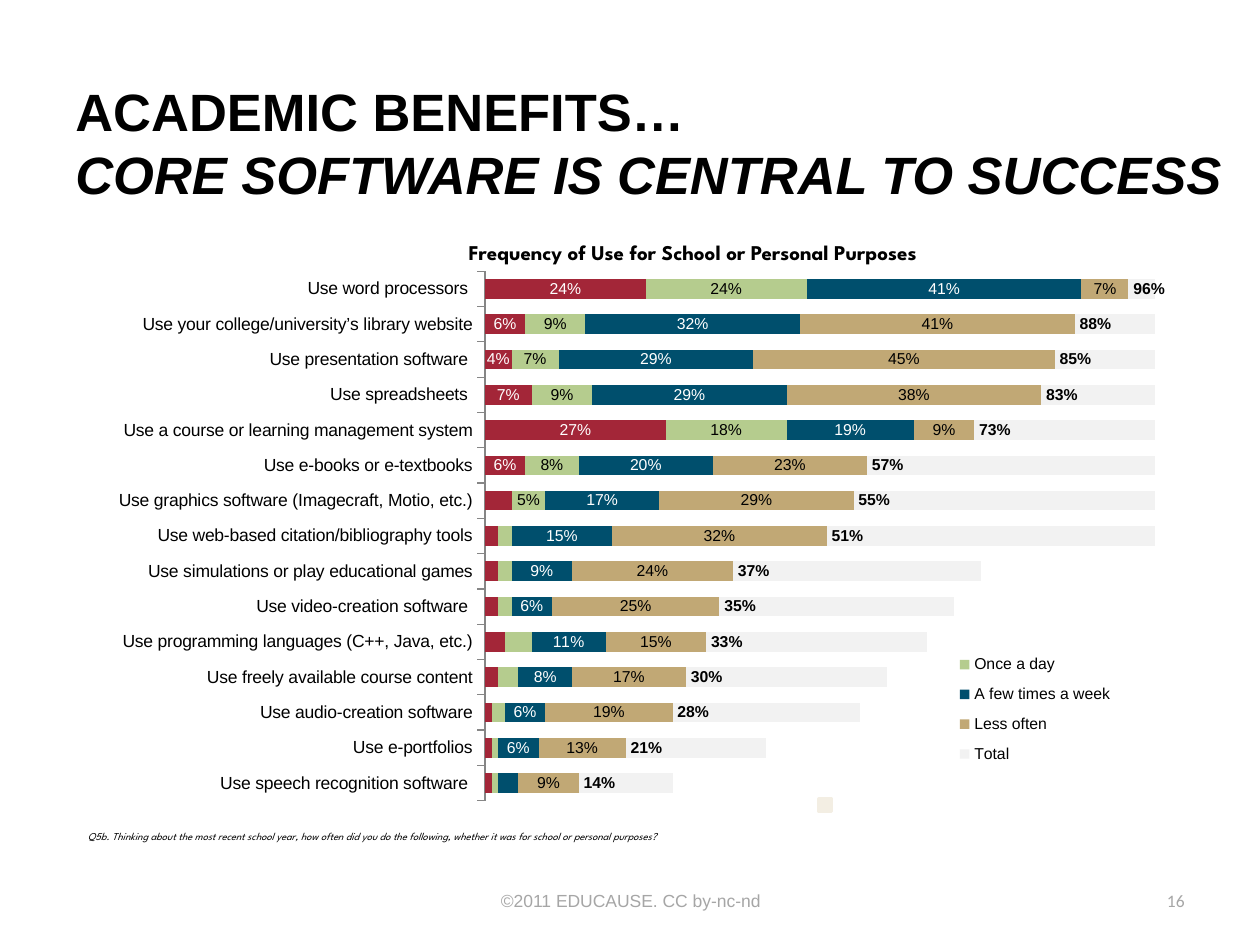
from dataclasses import dataclass

from lxml.etree import SubElement
from pptx import Presentation
from pptx.chart.data import CategoryChartData
from pptx.dml.color import RGBColor
from pptx.enum.chart import XL_CHART_TYPE as ChartType, XL_LABEL_POSITION as LabelPos
from pptx.enum.chart import XL_LEGEND_POSITION as LegendPos, XL_TICK_MARK as Tick
from pptx.enum.shapes import MSO_SHAPE as Shape
from pptx.enum.text import MSO_ANCHOR as Anchor, PP_ALIGN as Align
from pptx.oxml import parse_xml
from pptx.oxml.ns import nsdecls, qn
from pptx.util import Inches, Pt


@dataclass(frozen=True)
class Theme:
    """Colours, fonts and type sizes of the slide."""
    ink: str = "000000"
    white: str = "FFFFFF"
    muted: str = "A6A6A6"
    axis: str = "868686"
    marker: str = "F3EEE3"
    body: str = "Arial"
    accent: str = "League Spartan"
    number: str = "Calibri"
    title_size: int = 30
    heading_size: int = 12
    small_size: int = 10
    label_size: int = 9
    note_size: int = 6


THEME = Theme()

CATEGORIES = [
    "Use word processors ",
    "Use your college/university’s library website",
    "Use presentation software ",
    "Use spreadsheets ",
    "Use a course or learning management system",
    "Use e-books or e-textbooks",
    "Use graphics software (Imagecraft, Motio, etc.)",
    "Use web-based citation/bibliography tools",
    "Use simulations or play educational games",
    "Use video-creation software ",
    "Use programming languages (C++, Java, etc.)",
    "Use freely available course content",
    "Use audio-creation software",
    "Use e-portfolios",
    "Use speech recognition software ",
]


@dataclass(frozen=True)
class Frequency:
    """One series: percentages, bar and label colours, first row without a label."""
    name: str
    percents: tuple
    fill: str
    label: str
    unlabelled_from: int = len(CATEGORIES)
    position: LabelPos = LabelPos.CENTER
    bold: bool = False


FREQUENCIES = [
    Frequency("Several times a day", (24, 6, 4, 7, 27, 6, 4, 2, 2, 2, 3, 2, 1, 1, 1),
              "A32638", THEME.white, 6),
    Frequency("Once a day", (24, 9, 7, 9, 18, 8, 5, 2, 2, 2, 4, 3, 2, 1, 1),
              "B5CC8E", THEME.ink, 7),
    Frequency("A few times a week", (41, 32, 29, 29, 19, 20, 17, 15, 9, 6, 11, 8, 6, 6, 3),
              "004F6D", THEME.white, 14),
    Frequency("Less often", (7, 41, 45, 38, 9, 23, 29, 32, 24, 25, 15, 17, 19, 13, 9),
              "C1A875", THEME.ink),
    Frequency("Total", (96, 88, 85, 83, 73, 57, 55, 51, 37, 35, 33, 30, 28, 21, 14),
              "F2F2F2", THEME.ink, position=LabelPos.INSIDE_BASE, bold=True),
]


def style_font(font, size, color=THEME.ink, name=THEME.body, bold=False, italic=False):
    """Set the typeface, size, colour and emphasis of a font."""
    font.name, font.size, font.bold, font.italic = name, Pt(size), bold, italic
    font.color.rgb = RGBColor.from_string(color)


def add_text(page, box, lines, align=Align.LEFT, anchor=Anchor.TOP, **style):
    """Add a text box; each line is a string with its italic flag."""
    frame = page.shapes.add_textbox(*map(Inches, box)).text_frame
    frame.word_wrap, frame.vertical_anchor = True, anchor
    para = frame.paragraphs[0]
    para.alignment = align
    for index, (text, italic) in enumerate(lines):
        if index:
            para.add_line_break()
        span = para.add_run()
        span.text = text
        style_font(span.font, italic=italic, **style)


def set_layout(parent, after, x, y, width, height, inner=False):
    """Place a plot area or legend by fractions of the chart box."""
    target = '<c:layoutTarget val="inner"/>' if inner else ""
    modes = '<c:xMode val="edge"/><c:yMode val="edge"/>'
    sizes = "".join(f'<c:{tag} val="{value}"/>'
                    for tag, value in zip("xywh", (x, y, width, height)))
    for old in parent.findall(qn("c:layout")):
        parent.remove(old)
    layout = parse_xml(f'<c:layout {nsdecls("c")}><c:manualLayout>'
                       f'{target}{modes}{sizes}</c:manualLayout></c:layout>')
    position = parent.index(after) + 1 if after is not None else 0
    parent.insert(position, layout)


def style_series(series, frequency):
    """Colour a series and show its labels on the wider bars."""
    series.format.fill.solid()
    series.format.fill.fore_color.rgb = RGBColor.from_string(frequency.fill)
    series.invert_if_negative = False
    labels = series.data_labels
    labels.show_value = True
    labels.number_format, labels.number_format_is_linked = "0%", False
    labels.position = frequency.position
    style_font(labels.font, THEME.label_size, frequency.label, bold=frequency.bold)
    element = series._element.find(qn("c:dLbls"))
    for place, row in enumerate(range(frequency.unlabelled_from, len(CATEGORIES))):
        element.insert(place, parse_xml(
            f'<c:dLbl {nsdecls("c")}><c:idx val="{row}"/><c:delete val="1"/></c:dLbl>'))


def add_legend(chart):
    """Add the legend inside the lower right of the chart, with one entry hidden."""
    chart.has_legend = True
    legend = chart.legend
    legend.position, legend.include_in_layout = LegendPos.RIGHT, False
    style_font(legend.font, THEME.label_size)
    element = legend._element
    entry = parse_xml(f'<c:legendEntry {nsdecls("c")}><c:idx val="4"/>'
                      '<c:delete val="1"/></c:legendEntry>')
    element.insert(1, entry)
    set_layout(element, entry, 0.76, 0.69, 0.2, 0.23)


def add_frequency_chart(page, box):
    """Add the stacked bars of how often each tool is used."""
    data = CategoryChartData(number_format="0%")
    data.categories = CATEGORIES
    for frequency in FREQUENCIES:
        data.add_series(frequency.name, [value / 100 for value in frequency.percents])
    chart = page.shapes.add_chart(ChartType.BAR_STACKED, *map(Inches, box), data).chart
    chart.has_title = False
    style_font(chart.font, THEME.label_size)
    plot = chart.plots[0]
    plot.gap_width, plot.overlap, plot.vary_by_categories = 80, 100, False
    for series, frequency in zip(plot.series, FREQUENCIES):
        style_series(series, frequency)
    rows, scale = chart.category_axis, chart.value_axis
    rows.reverse_order = True
    rows.major_tick_mark, rows.minor_tick_mark = Tick.OUTSIDE, Tick.NONE
    rows.format.line.color.rgb = RGBColor.from_string(THEME.axis)
    style_font(rows.tick_labels.font, THEME.small_size)
    scale.minimum_scale, scale.maximum_scale = 0, 1
    scale.has_major_gridlines, scale.visible = False, False
    set_layout(chart._chartSpace.chart.plotArea, None, 0.357, 0.034, 0.613, 0.932, inner=True)
    add_legend(chart)


def add_marker(page, box):
    """Add the small pale square under the chart."""
    marker = page.shapes.add_shape(Shape.RECTANGLE, *map(Inches, box))
    marker.shadow.inherit = False
    marker.fill.solid()
    marker.fill.fore_color.rgb = RGBColor.from_string(THEME.marker)
    marker.line.color.rgb = RGBColor.from_string(THEME.marker)
    marker.line.width = Pt(2)


def add_footer(page, left, top, width, height):
    """Add the centred copyright line and the page number at the right."""
    style = dict(anchor=Anchor.MIDDLE, size=THEME.small_size, color=THEME.muted)
    add_text(page, (left + 2.92, top, 3.17, height),
             [("©2011 EDUCAUSE. CC by-nc-nd", False)], align=Align.CENTER, **style)
    add_text(page, (left + width - 2.33, top, 2.33, height), [("16", False)],
             align=Align.RIGHT, name=THEME.number, **style)


def main():
    """Build the slide and save the deck."""
    deck = Presentation()
    deck.slide_width, deck.slide_height = Inches(10), Inches(7.5)
    page = deck.slides.add_slide(deck.slide_layouts[6])
    add_text(page, (0.5, 0.5, 9.5, 1.25),
             [("ACADEMIC BENEFITS…", False), ("CORE SOFTWARE IS CENTRAL TO SUCCESS", True)],
             anchor=Anchor.MIDDLE, size=THEME.title_size, bold=True)
    add_footer(page, 0.5, 6.95, 9, 0.4)
    add_text(page, (3.2, 1.85, 4.6, 0.3),
             [("Frequency of Use for School or Personal Purposes", False)],
             align=Align.CENTER, size=THEME.heading_size, name=THEME.accent, bold=True)
    add_frequency_chart(page, (0.75, 2, 8.68, 4.51))
    add_marker(page, (6.5, 6.34, 0.1, 0.1))
    add_text(page, (0.6, 6.54, 8.83, 0.2),
             [("Q5b. Thinking about the most recent school year, how often did you do the "
               "following, whether it was for school or personal purposes?", True)],
             size=THEME.note_size, name=THEME.accent)
    deck.save("out.pptx")


if __name__ == "__main__":
    main()
